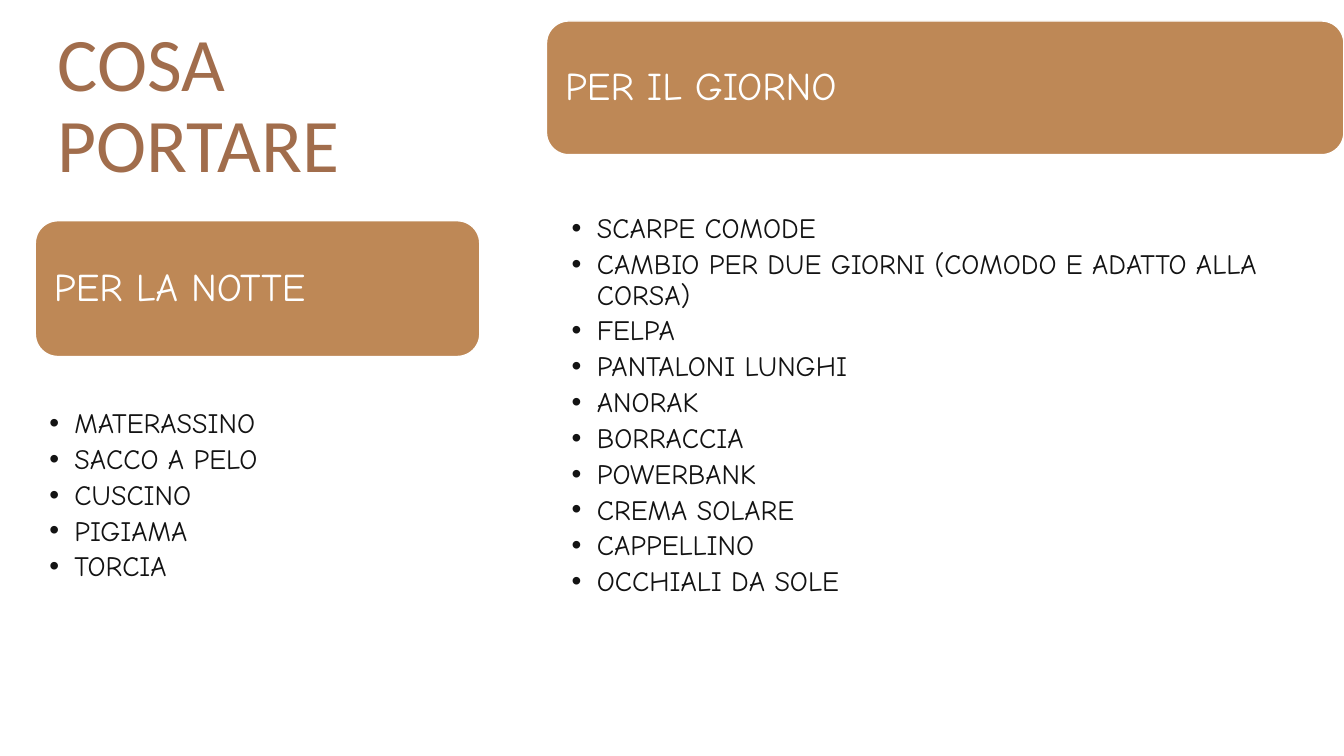
from lxml.etree import SubElement
from pptx import Presentation
from pptx.dml.color import RGBColor
from pptx.enum.shapes import MSO_SHAPE
from pptx.enum.text import MSO_ANCHOR, PP_ALIGN
from pptx.oxml.ns import qn
from pptx.util import Pt

BROWN, TAN, WHITE, INK = "A16D4C", "BE8856", "FFFFFF", "131313"
NIGHT_ITEMS = ["MATERASSINO", "SACCO A PELO", "CUSCINO", "PIGIAMA", "TORCIA"]
DAY_ITEMS = [
    "SCARPE COMODE",
    "CAMBIO PER DUE GIORNI (COMODO E ADATTO ALLA CORSA)",
    "FELPA",
    "PANTALONI LUNGHI",
    "ANORAK",
    "BORRACCIA",
    "POWERBANK",
    "CREMA SOLARE",
    "CAPPELLINO",
    "OCCHIALI DA SOLE",
]


def color(hex_value):
    """Turn a hex string into a colour."""
    return RGBColor.from_string(hex_value)


def write(frame, text, font, size, hex_value):
    """Fill a text frame with left-aligned lines in one style."""
    frame.word_wrap = True
    frame.text = text
    for paragraph in frame.paragraphs:
        paragraph.alignment = PP_ALIGN.LEFT
        paragraph.line_spacing = 0.9
        for run in paragraph.runs:
            run.font.name = font
            run.font.size = Pt(size)
            run.font.color.rgb = color(hex_value)


def add_text(slide, left, top, width, height):
    """Add a text box and return its frame."""
    box = slide.shapes.add_textbox(Pt(left), Pt(top), Pt(width), Pt(height))
    return box.text_frame


def add_header(slide, label, left, top, width, height):
    """Add a rounded section header with its label."""
    header = slide.shapes.add_shape(
        MSO_SHAPE.ROUNDED_RECTANGLE, Pt(left), Pt(top), Pt(width), Pt(height))
    header.shadow.inherit = False
    header.fill.solid()
    header.fill.fore_color.rgb = color(TAN)
    header.line.color.rgb = color(WHITE)
    header.line.width = Pt(1)
    frame = header.text_frame
    frame.vertical_anchor = MSO_ANCHOR.MIDDLE
    frame.margin_left = frame.margin_right = Pt(8.6)
    write(frame, label, "Comic Neue", 28, WHITE)


def add_bullets(slide, items, left, top, width, height, inset):
    """Add a bulleted packing list."""
    frame = add_text(slide, left, top, width, height)
    frame.margin_left, frame.margin_right = Pt(inset), Pt(11.5)
    frame.margin_top = frame.margin_bottom = Pt(2.2)
    write(frame, "\n".join(items), "Comic Neue", 20, INK)
    for paragraph in frame.paragraphs:
        paragraph.space_after = Pt(4)
        properties = paragraph._p.get_or_add_pPr()
        properties.set("marL", str(Pt(18)))
        properties.set("indent", str(-Pt(18)))
        SubElement(properties, qn("a:buFont"), typeface="Arial")
        SubElement(properties, qn("a:buChar"), char="•")


def main():
    """Build the packing list slide."""
    deck = Presentation()
    deck.slide_width, deck.slide_height = Pt(960), Pt(540)
    slide = deck.slides.add_slide(deck.slide_layouts[6])
    title = add_text(slide, 34, 15, 317.5, 285)
    write(title, "COSA PORTARE", "Calibri", 54, BROWN)
    add_header(slide, "PER LA NOTTE", 25.2, 157.7, 317.5, 97)
    add_bullets(slide, NIGHT_ITEMS, 25.2, 290.2, 317.5, 153.4, inset=10)
    add_header(slide, "PER IL GIORNO", 390.4, 15, 569.6, 95.5)
    add_bullets(slide, DAY_ITEMS, 390.4, 151.2, 569.6, 334, inset=18)
    deck.save("out.pptx")


if __name__ == "__main__":
    main()
